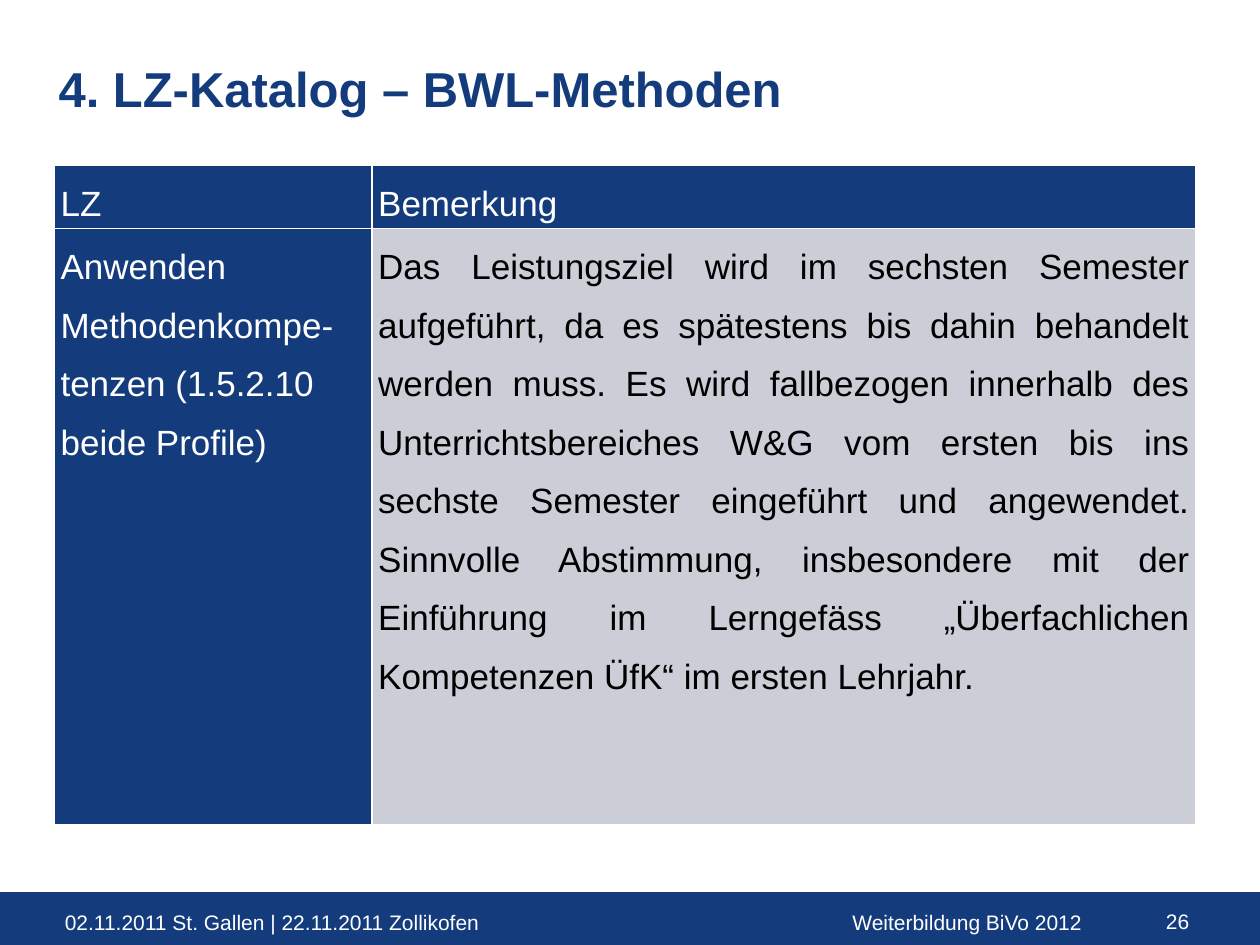
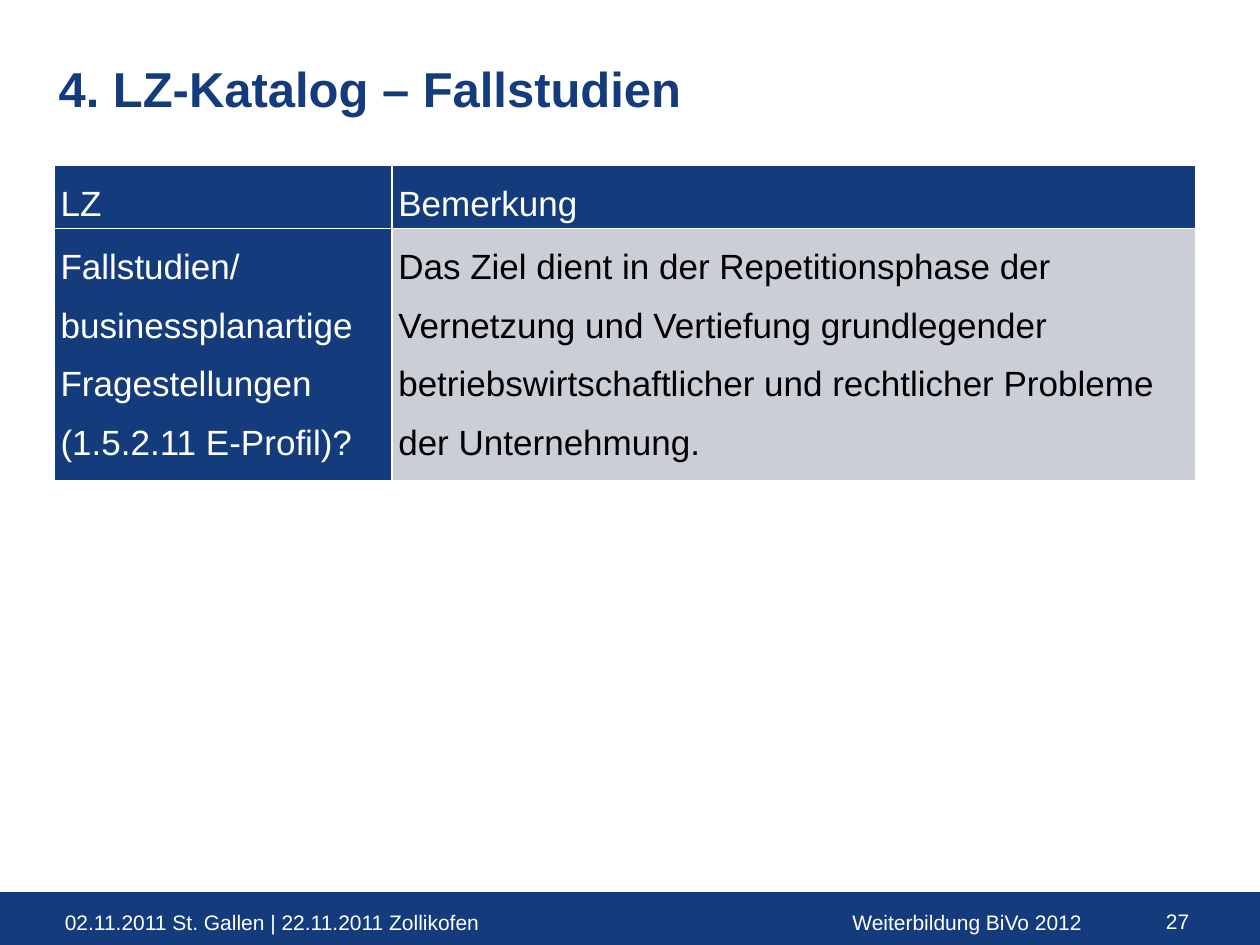
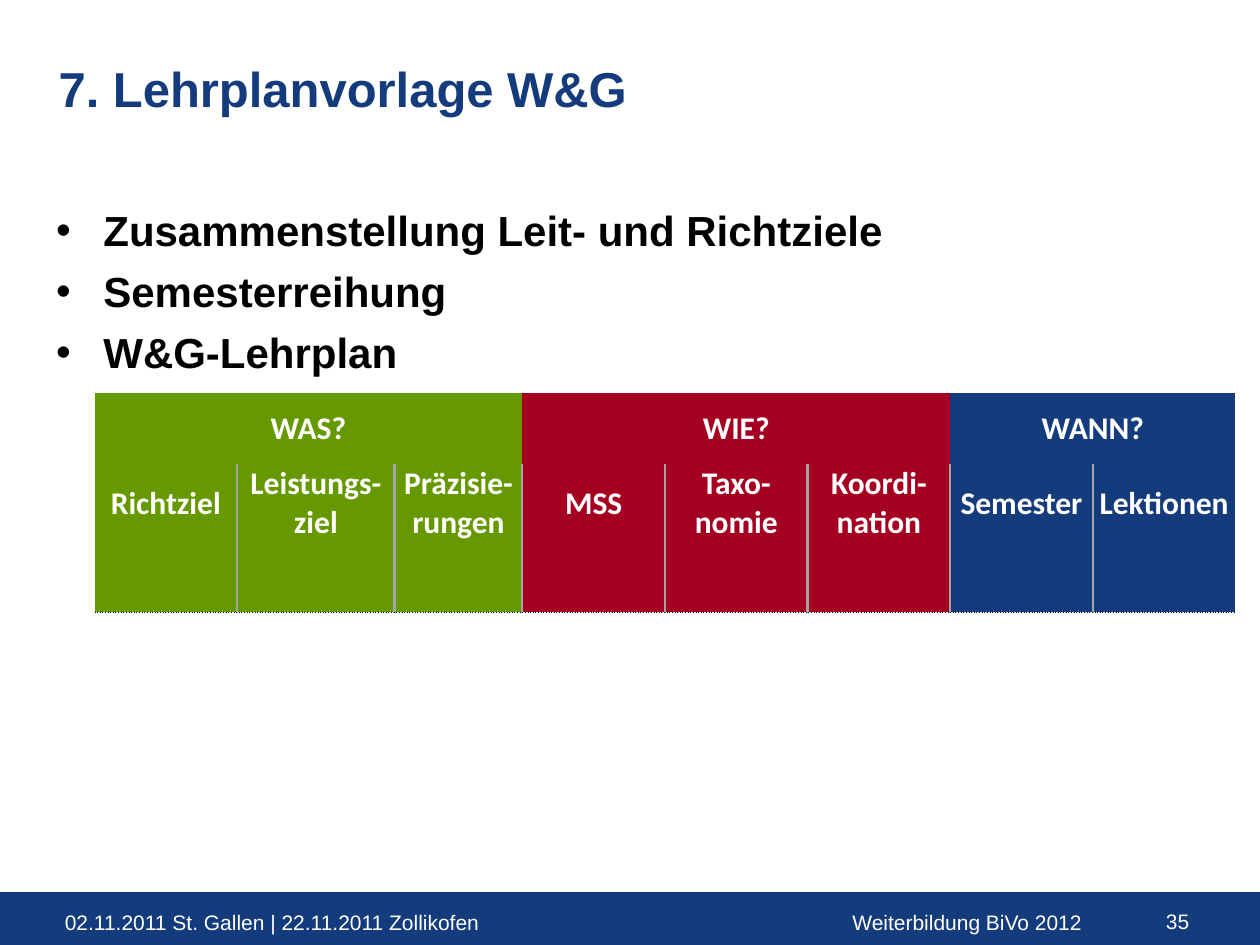
from dataclasses import dataclass
from typing import Optional

from lxml.etree import SubElement
from pptx import Presentation
from pptx.dml.color import RGBColor
from pptx.enum.shapes import MSO_SHAPE as Preset
from pptx.enum.text import MSO_ANCHOR as Anchor, PP_ALIGN as Align
from pptx.oxml.ns import qn
from pptx.slide import Slide
from pptx.table import Table, _Cell as Cell
from pptx.text.text import TextFrame, _Paragraph as Paragraph
from pptx.util import Pt

# Shared colours and fonts
NAVY, GREEN, RED = "143C7D", "669900", "A50021"
WHITE, BLACK, PALE, GREY = "FFFFFF", "000000", "CCCED7", "A6A6A6"
ARIAL, CALIBRI = "Arial", "Calibri"


@dataclass(frozen=True)
class Box:
    left: float
    top: float
    width: float
    height: float


@dataclass(frozen=True)
class Style:
    size: float
    color: str
    bold: bool = False
    font: str = ARIAL
    align: Align = Align.LEFT


@dataclass(frozen=True)
class Margins:
    left: float = 7.2
    top: float = 3.6
    right: float = 7.2
    bottom: float = 3.6


@dataclass(frozen=True)
class Line:
    color: str
    width: float
    dash: str = "solid"


@dataclass(frozen=True)
class Goal:
    title: str
    page: int
    first_width: float
    body_height: float
    goal: str
    remark: str
    remark_align: Align = Align.LEFT


@dataclass(frozen=True)
class Group:
    question: str
    color: str
    headings: tuple[str, ...]


TITLE = Style(28, NAVY, bold=True)
BULLET = Style(24, BLACK, bold=True)
FOOTER = Style(12, WHITE)
PAGE = Style(12, WHITE, align=Align.RIGHT)
GOAL_TEXT = Style(20, WHITE)
PLAN_TEXT = Style(18, WHITE, bold=True, font=CALIBRI, align=Align.CENTER)

BAND_BOX = Box(-3, 510, 723, 30)
TITLE_BOX = Box(27.5, 27.5, 525.5, 67)
PLACE_BOX = Box(30, 516, 341, 23)
EVENT_BOX = Box(480, 516, 168, 24)
PAGE_BOX = Box(648, 515.5, 42, 24.5)
BULLET_BOX = Box(25, 111, 656, 363)

# Content
GOALS = [
    Goal("4. LZ-Katalog – BWL-Methoden", 26, 181.5, 340.5,
         "Anwenden Methodenkompe-tenzen (1.5.2.10 beide Profile)",
         "Das Leistungsziel wird im sechsten Semester aufgeführt, da es spätestens bis "
         "dahin behandelt werden muss. Es wird fallbezogen innerhalb des "
         "Unterrichtsbereiches W&G vom ersten bis ins sechste Semester eingeführt und "
         "angewendet. Sinnvolle Abstimmung, insbesondere mit der Einführung im Lerngefäss "
         "„Überfachlichen Kompetenzen ÜfK“ im ersten Lehrjahr.", Align.JUSTIFY),
    Goal("4. LZ-Katalog – Fallstudien", 27, 193, 134,
         "Fallstudien/ businessplanartige Fragestellungen (1.5.2.11 E-Profil)?",
         "Das Ziel dient in der Repetitionsphase der Vernetzung und Vertiefung "
         "grundlegender betriebswirtschaftlicher und rechtlicher Probleme der "
         "Unternehmung."),
]
BULLETS = ["Zusammenstellung Leit- und Richtziele", "Semesterreihung", "W&G-Lehrplan"]
GROUPS = [
    Group("WAS?", GREEN, ("Richtziel", "Leistungs-ziel", "Präzisie-rungen")),
    Group("WIE?", RED, ("MSS", "Taxo-nomie", "Koordi-nation")),
    Group("WANN?", NAVY, ("Semester", "Lektionen")),
]


def rgb(color: str) -> RGBColor:
    return RGBColor.from_string(color)


def write(paragraph: Paragraph, text: str, style: Style) -> None:
    paragraph.alignment = style.align
    run = paragraph.add_run()
    run.text = text
    run.font.name = style.font
    run.font.size = Pt(style.size)
    run.font.bold = style.bold
    run.font.color.rgb = rgb(style.color)


def set_margins(target: TextFrame | Cell, margins: Margins) -> None:
    target.margin_left, target.margin_top = Pt(margins.left), Pt(margins.top)
    target.margin_right, target.margin_bottom = Pt(margins.right), Pt(margins.bottom)


def add_frame(slide: Slide, box: Box, margins: Margins = Margins()) -> TextFrame:
    shape = slide.shapes.add_textbox(Pt(box.left), Pt(box.top), Pt(box.width), Pt(box.height))
    frame = shape.text_frame
    frame.word_wrap = True
    set_margins(frame, margins)
    return frame


def add_page(presentation: Presentation, title: str, page: int) -> Slide:
    """Blank slide with the footer band, footer texts and title."""
    slide = presentation.slides.add_slide(presentation.slide_layouts[6])
    band = slide.shapes.add_shape(Preset.RECTANGLE, Pt(BAND_BOX.left), Pt(BAND_BOX.top),
                                  Pt(BAND_BOX.width), Pt(BAND_BOX.height))
    band.shadow.inherit = False
    band.fill.solid()
    band.fill.fore_color.rgb = rgb(NAVY)
    band.line.color.rgb = rgb(NAVY)
    band.line.width = Pt(0.75)
    for box, text, style in (
        (PLACE_BOX, "02.11.2011 St. Gallen | 22.11.2011 Zollikofen", FOOTER),
        (EVENT_BOX, "Weiterbildung BiVo 2012", FOOTER),
        (PAGE_BOX, f"{page} ", PAGE),
    ):
        write(add_frame(slide, box).paragraphs[0], text, style)
    write(add_frame(slide, TITLE_BOX, Margins(left=6, top=6)).paragraphs[0], title, TITLE)
    return slide


def add_grid(slide: Slide, left: float, top: float,
             widths: list[float], heights: list[float]) -> Table:
    table = slide.shapes.add_table(len(heights), len(widths), Pt(left), Pt(top),
                                   Pt(sum(widths)), Pt(sum(heights))).table
    for column, width in zip(table.columns, widths):
        column.width = Pt(width)
    for row, height in zip(table.rows, heights):
        row.height = Pt(height)
    return table


def paint_cell(cell: Cell, fill: str, margins: Margins, left: Optional[Line] = None,
               right: Optional[Line] = None, top: Optional[Line] = None,
               bottom: Optional[Line] = None) -> None:
    """Set margins, the four borders (None hides one) and the fill."""
    set_margins(cell, margins)
    properties = cell._tc.get_or_add_tcPr()
    for tag, line in (("a:lnL", left), ("a:lnR", right), ("a:lnT", top), ("a:lnB", bottom)):
        border = SubElement(properties, qn(tag))
        if line is None:
            SubElement(border, qn("a:noFill"))
            continue
        border.set("w", str(Pt(line.width)))
        color = SubElement(SubElement(border, qn("a:solidFill")), qn("a:srgbClr"))
        color.set("val", line.color)
        SubElement(border, qn("a:prstDash")).set("val", line.dash)
    cell.fill.solid()
    cell.fill.fore_color.rgb = rgb(fill)


def add_goal_slide(presentation: Presentation, goal: Goal) -> None:
    slide = add_page(presentation, goal.title, goal.page)
    table = add_grid(slide, 31, 94.5, [goal.first_width, 652.5 - goal.first_width],
                     [33, goal.body_height])
    rule = Line(WHITE, 1)
    remark_style = Style(20, BLACK, align=goal.remark_align)
    cells = (
        ("LZ", NAVY, GOAL_TEXT), ("Bemerkung", NAVY, GOAL_TEXT),
        (goal.goal, NAVY, GOAL_TEXT), (goal.remark, PALE, remark_style),
    )
    for cell, (text, fill, style) in zip(table.iter_cells(), cells):
        paint_cell(cell, fill, Margins(3.6, 0, 3.6, 0), rule, rule, rule, rule)
        paragraph = cell.text_frame.paragraphs[0]
        paragraph.line_spacing = 1.5
        write(paragraph, text, style)


def add_bullets(slide: Slide) -> None:
    frame = add_frame(slide, BULLET_BOX, Margins(top=6))
    for index, text in enumerate(BULLETS):
        paragraph = frame.add_paragraph() if index else frame.paragraphs[0]
        properties = paragraph._p.get_or_add_pPr()
        properties.set("marL", str(Pt(27)))
        properties.set("indent", str(Pt(-27)))
        SubElement(properties, qn("a:buFont")).set("typeface", ARIAL)
        SubElement(properties, qn("a:buChar")).set("char", "•")
        if index:
            paragraph.space_before = Pt(6)
        write(paragraph, text, BULLET)


def add_plan_table(slide: Slide) -> None:
    widths = [81.5, 90, 73] + [81.5] * 5
    table = add_grid(slide, 54, 224.5, widths, [40.5, 44.5, 40.5])
    margins = Margins(0.7, 0.7, 0.7, 0)
    divider, dotted = Line(GREY, 1.5), Line(BLACK, 0.5, "sysDot")
    last = len(widths) - 1
    column = 0
    for group in GROUPS:
        start = column
        for heading in group.headings:
            left = divider if column > 0 else None
            right = divider if column < last else None
            paint_cell(table.cell(0, column), group.color, margins)
            paint_cell(table.cell(1, column), group.color, margins, left, right)
            paint_cell(table.cell(2, column), group.color, margins, left, right, bottom=dotted)
            write_centred(table.cell(1, column), heading)
            column += 1
        question_cell = table.cell(0, start)
        question_cell.merge(table.cell(0, column - 1))
        write_centred(question_cell, group.question)


def write_centred(cell: Cell, text: str) -> None:
    cell.vertical_anchor = Anchor.MIDDLE
    write(cell.text_frame.paragraphs[0], text, PLAN_TEXT)


def main() -> None:
    presentation = Presentation()
    presentation.slide_width, presentation.slide_height = Pt(720), Pt(540)
    # Learning goals with remarks
    for goal in GOALS:
        add_goal_slide(presentation, goal)
    # Curriculum template
    plan_slide = add_page(presentation, "7. Lehrplanvorlage W&G", 35)
    add_bullets(plan_slide)
    add_plan_table(plan_slide)
    presentation.save("out.pptx")


if __name__ == "__main__":
    main()
